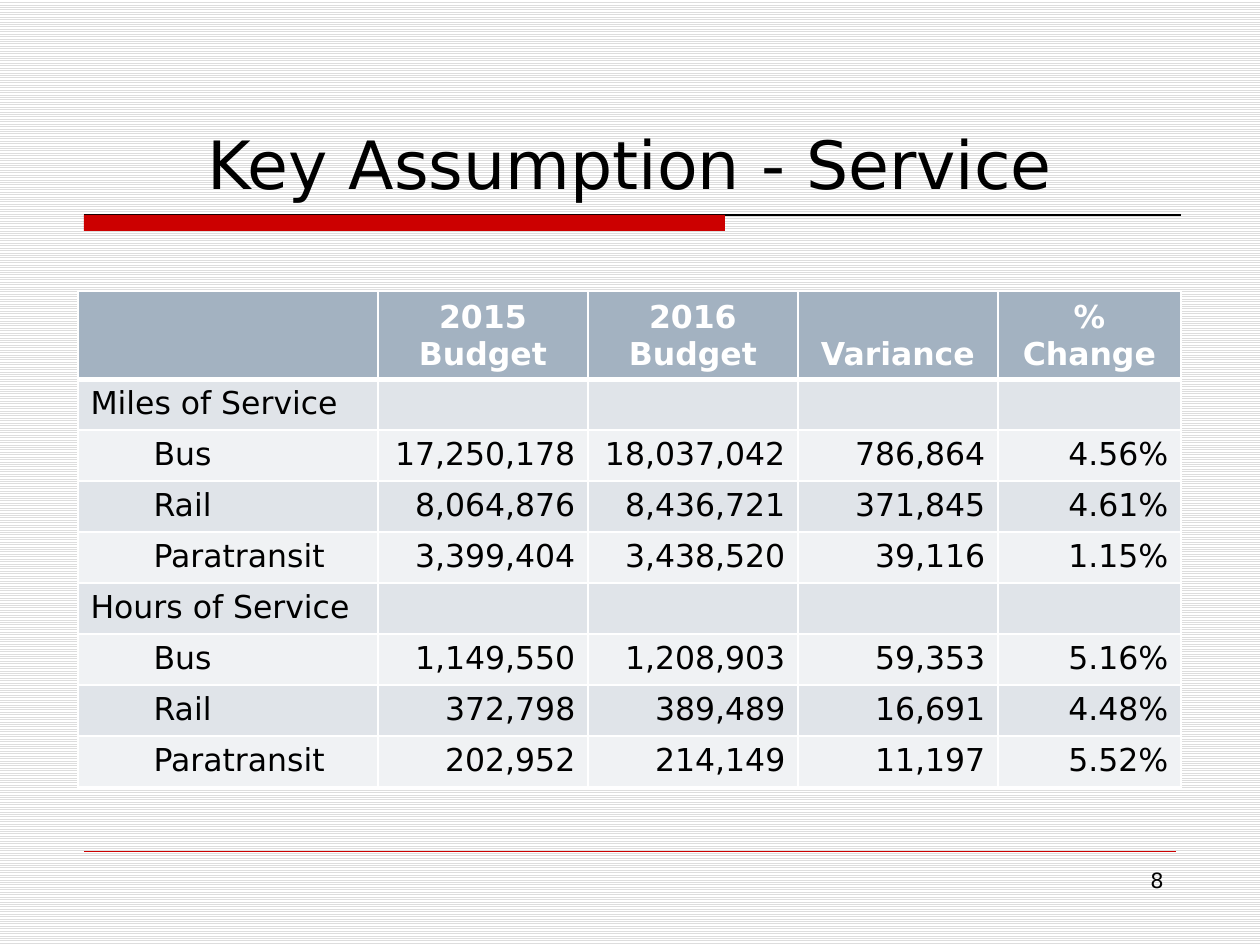
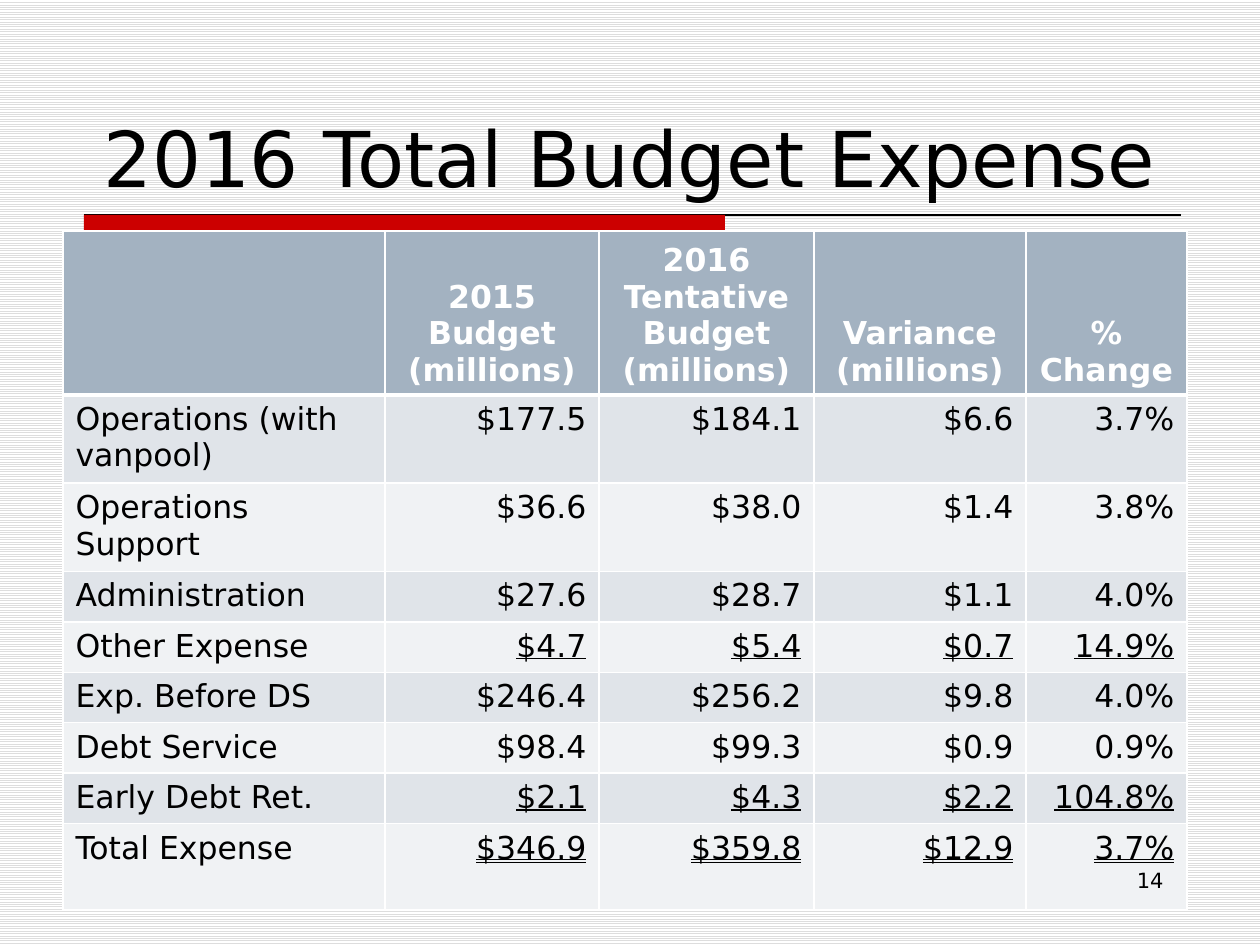
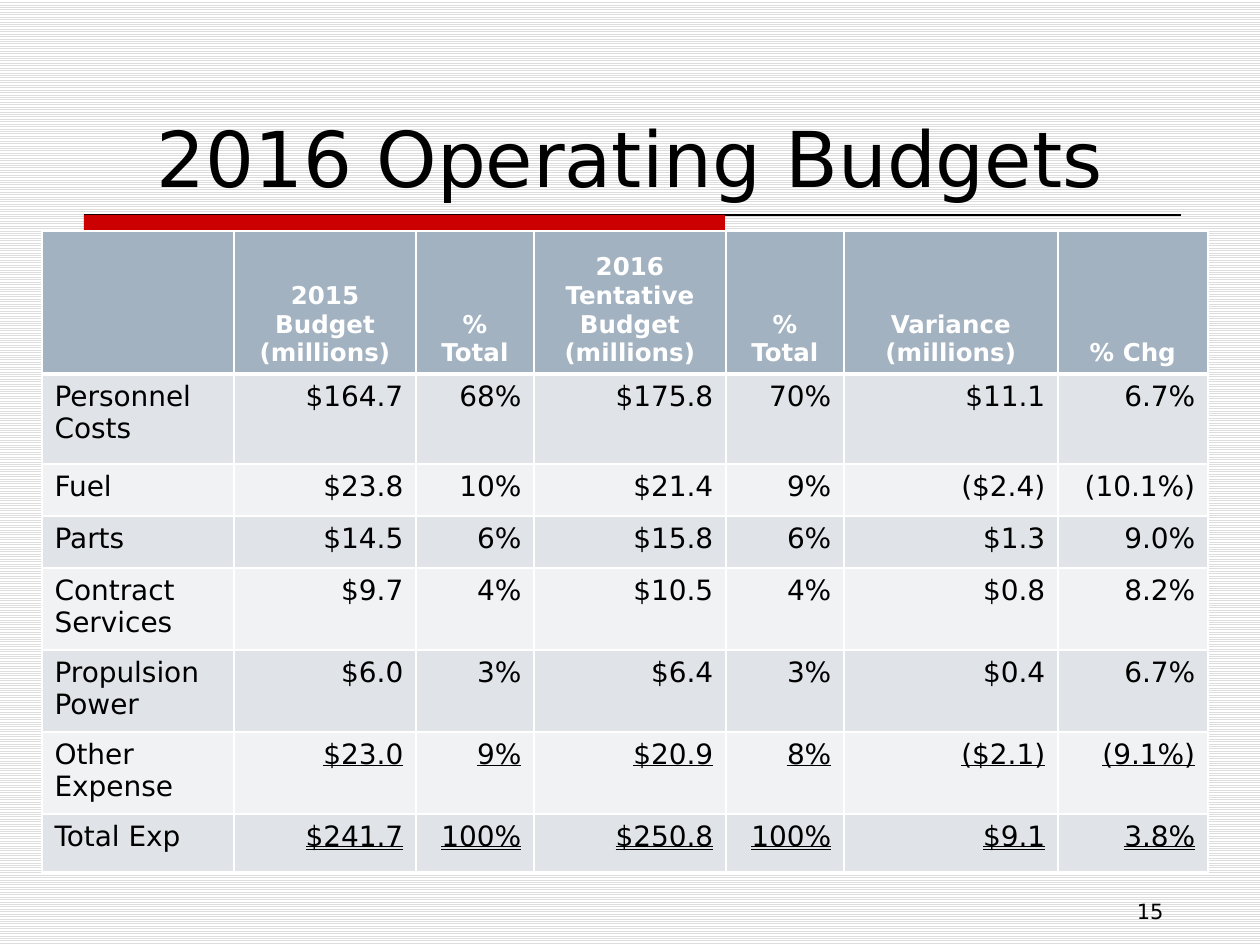
"""Build three transit budget slides, each with one table."""
from lxml import etree
from pptx import Presentation
from pptx.dml.color import RGBColor
from pptx.enum.dml import MSO_PATTERN
from pptx.enum.shapes import MSO_CONNECTOR, MSO_SHAPE
from pptx.enum.text import MSO_ANCHOR, MSO_UNDERLINE, PP_ALIGN
from pptx.oxml.ns import qn
from pptx.util import Emu, Pt

LEFT, CENTER, RIGHT = PP_ALIGN.LEFT, PP_ALIGN.CENTER, PP_ALIGN.RIGHT
TOP, BOTTOM = MSO_ANCHOR.TOP, MSO_ANCHOR.BOTTOM
SINGLE, DOUBLE = MSO_UNDERLINE.SINGLE_LINE, MSO_UNDERLINE.DOUBLE_LINE
STRAIGHT, RECT = MSO_CONNECTOR.STRAIGHT, MSO_SHAPE.RECTANGLE
HATCH = MSO_PATTERN.LIGHT_HORIZONTAL

FONT = "DejaVu Sans"
COLORS = {
    "ink": "000000",
    "paper": "FFFFFF",
    "hatch": "DDDDDD",
    "red": "CC0000",
    "head": "A3B2C1",
    "odd": "E0E4E9",
    "even": "F0F2F4",
}
INDENT = 63
SUBS = ("Bus", "Rail", "Paratransit")

SERVICE = [
    ("", "2015 Budget", "2016\nBudget", "Variance", "% Change"),
    ("Miles of Service", "", "", "", ""),
    ("Bus", "17,250,178", "18,037,042", "786,864", "4.56%"),
    ("Rail", "8,064,876", "8,436,721", "371,845", "4.61%"),
    ("Paratransit", "3,399,404", "3,438,520", "39,116", "1.15%"),
    ("Hours of Service", "", "", "", ""),
    ("Bus", "1,149,550", "1,208,903", "59,353", "5.16%"),
    ("Rail", "372,798", "389,489", "16,691", "4.48%"),
    ("Paratransit", "202,952", "214,149", "11,197", "5.52%"),
]
EXPENSE = [
    ("", "2015 Budget (millions)", "2016 Tentative Budget\n(millions)",
     "Variance\n(millions)", "% Change"),
    ("Operations (with vanpool)", "$177.5", "$184.1", "$6.6", "3.7%"),
    ("Operations Support", "$36.6", "$38.0", "$1.4", "3.8%"),
    ("Administration", "$27.6", "$28.7", "$1.1", "4.0%"),
    ("Other Expense", "$4.7", "$5.4", "$0.7", "14.9%"),
    ("Exp. Before DS", "$246.4", "$256.2", "$9.8", "4.0%"),
    ("Debt Service", "$98.4", "$99.3", "$0.9", "0.9%"),
    ("Early Debt Ret.", "$2.1", "$4.3", "$2.2", "104.8%"),
    ("Total Expense", "$346.9", "$359.8", "$12.9", "3.7%"),
]
BUDGETS = [
    ("", "2015 Budget (millions)", "% Total",
     "2016 Tentative Budget\n(millions)", "% Total",
     "Variance\n(millions)", "% Chg"),
    ("Personnel Costs", "$164.7", "68%", "$175.8", "70%", "$11.1", "6.7%"),
    ("Fuel", "$23.8", "10%", "$21.4", "9%", "($2.4)", "(10.1%)"),
    ("Parts", "$14.5", "6%", "$15.8", "6%", "$1.3", "9.0%"),
    ("Contract Services", "$9.7", "4%", "$10.5", "4%", "$0.8", "8.2%"),
    ("Propulsion Power", "$6.0", "3%", "$6.4", "3%", "$0.4", "6.7%"),
    ("Other Expense", "$23.0", "9%", "$20.9", "8%", "($2.1)", "(9.1%)"),
    ("Total Exp", "$241.7", "100%", "$250.8", "100%", "$9.1", "3.8%"),
]


def px(num):
    """Turn pixels into EMU."""
    return Emu(round(num * 914400 / 126))


def color(name):
    """Look up a colour by name."""
    return RGBColor.from_string(COLORS[name])


def write(frame, text, align, tint="ink", **fmt):
    """Fill a text frame, one paragraph per line of text."""
    frame.text = text
    for para in frame.paragraphs:
        para.alignment = align
        for key, val in {"name": FONT, **fmt}.items():
            setattr(para.font, key, val)
            for run in para.runs:
                setattr(run.font, key, val)
        for run in para.runs:
            run.font.color.rgb = color(tint)


def label(slide, box, text, align, size, anchor=TOP):
    """Add a wrapped text box."""
    frame = slide.shapes.add_textbox(*map(px, box)).text_frame
    frame.word_wrap = True
    frame.vertical_anchor = anchor
    write(frame, text, align, size=Pt(size))


def rule(slide, left, right, top, tint, width):
    """Add a level line."""
    line = slide.shapes.add_connector(
        STRAIGHT, px(left), px(top), px(right), px(top))
    line.line.color.rgb = color(tint)
    line.line.width = Pt(width)
    etree.SubElement(line._element.spPr, qn("a:effectLst"))


def band(slide, box, tint):
    """Add a plain filled bar."""
    bar = slide.shapes.add_shape(RECT, *map(px, box))
    bar.shadow.inherit = False
    bar.fill.solid()
    bar.fill.fore_color.rgb = color(tint)
    bar.line.fill.background()


def edge(cell, row):
    """Draw white cell borders, heavy under the header."""
    heavy = {0: "lnB", 1: "lnT"}.get(row)
    props = cell._tc.get_or_add_tcPr()
    for side in ("lnL", "lnR", "lnT", "lnB"):
        width = Pt(3 if side == heavy else 1)
        line = etree.SubElement(props, qn(f"a:{side}"), w=str(width))
        fill = etree.SubElement(line, qn("a:solidFill"))
        etree.SubElement(fill, qn("a:srgbClr"), val=COLORS["paper"])


def shade(cell, tint):
    """Fill a cell with one colour."""
    cell.fill.solid()
    cell.fill.fore_color.rgb = color(tint)


def indent(para):
    """Move a sub-item one level in."""
    para.level = 1
    props = para._p.get_or_add_pPr()
    props.set("marL", str(px(INDENT)))
    props.set("indent", "0")


def grid(slide, left, top, cols, rows, data, sizes, lines):
    """Add a banded table; lines maps a row to its underline."""
    table = slide.shapes.add_table(
        len(rows), len(cols), px(left), px(top),
        px(sum(cols)), px(sum(rows))).table
    for col, width in zip(table.columns, cols):
        col.width = px(width)
    for row, height in zip(table.rows, rows):
        row.height = px(height)
    for r, texts in enumerate(data):
        for c, text in enumerate(texts):
            cell = table.cell(r, c)
            edge(cell, r)
            if r == 0:
                shade(cell, "head")
                cell.vertical_anchor = BOTTOM
                write(cell.text_frame, text, CENTER, "paper",
                      size=Pt(sizes[0]), bold=True)
                continue
            shade(cell, "odd" if r % 2 else "even")
            fmt = {"size": Pt(sizes[1]), "bold": False}
            if c and r in lines:
                fmt["underline"] = lines[r]
            write(cell.text_frame, text, RIGHT if c else LEFT, **fmt)
            if text in SUBS:
                indent(cell.text_frame.paragraphs[0])


def page(deck, title, size, num, top=861):
    """Add a slide with its backdrop, title, bands and number."""
    slide = deck.slides.add_slide(deck.slide_layouts[6])
    fill = slide.background.fill
    fill.patterned()
    fill.pattern = HATCH
    fill.fore_color.rgb = color("hatch")
    fill.back_color.rgb = color("paper")
    rule(slide, 84, 1181, 215, "ink", 0.75)
    band(slide, (84, 215, 641, 16), "red")
    rule(slide, 84, 1176, 851, "red", 0.25)
    label(slide, (79, 42, 1102, 167), title, CENTER, size, BOTTOM)
    return slide, (903, top, 273, 65), str(num)


def mark(slide, box, num):
    """Put the slide number above all else."""
    label(slide, box, num, RIGHT, 12)


def main():
    """Build and save the deck."""
    deck = Presentation()
    deck.slide_width, deck.slide_height = px(1260), px(945)

    foot = page(deck, "Key Assumption - Service", 38, 8)
    grid(foot[0], 78, 291, [300, 210, 210, 200, 183], [86] + [51] * 8,
         SERVICE, (18, 18), {})
    mark(*foot)

    foot = page(deck, "2016 Total Budget Expense", 44, 14)
    grid(foot[0], 63, 231, [322, 214, 215, 212, 161],
         [158, 86, 86] + [49] * 5 + [86], EXPENSE, (18, 18),
         {4: SINGLE, 7: SINGLE, 8: DOUBLE})
    mark(*foot)

    foot = page(deck, "2016 Operating Budgets", 44, 15, 892)
    grid(foot[0], 42, 231, [192, 182, 118, 192, 118, 214, 150],
         [143, 90, 52, 52, 82, 82, 82, 58], BUDGETS, (14, 16),
         {6: SINGLE, 7: DOUBLE})
    mark(*foot)

    deck.save("out.pptx")


if __name__ == "__main__":
    main()
